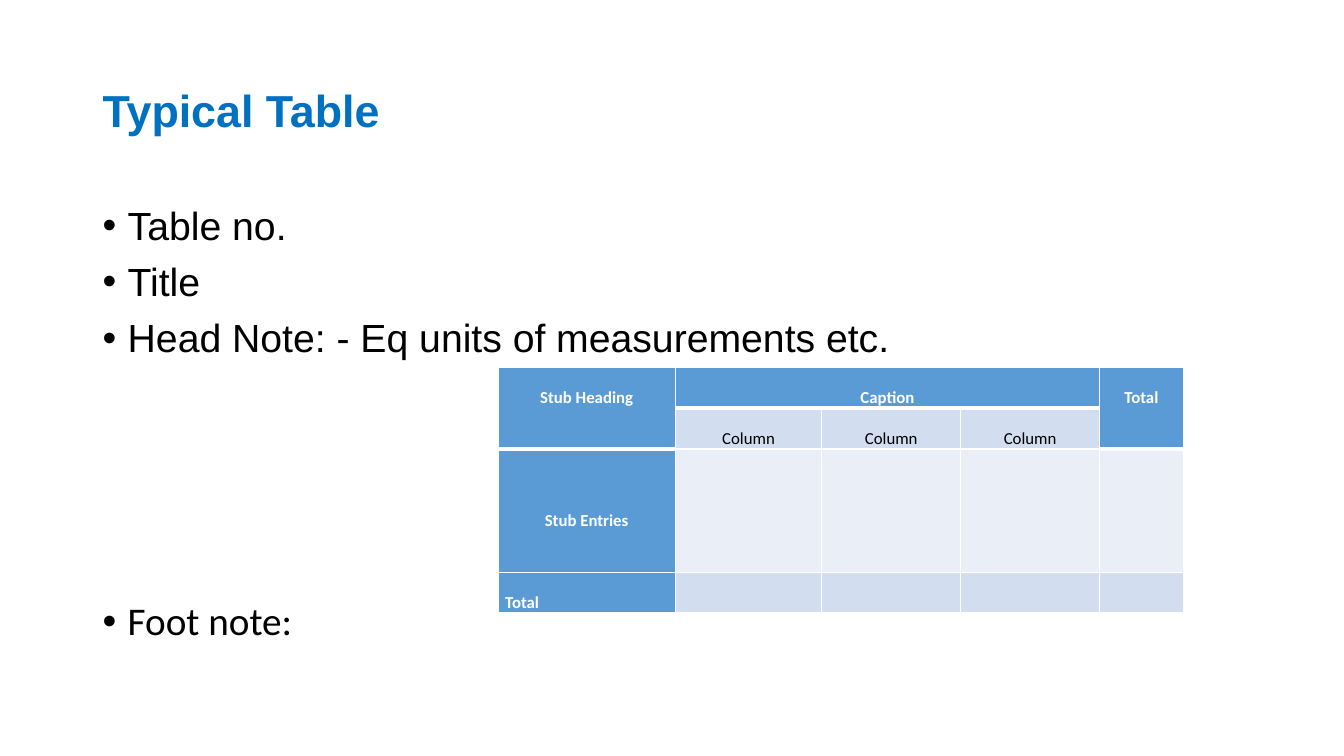
"""Build the slide that shows the parts of a typical table."""
import pptx
import pptx.dml.color
import pptx.enum.text
import pptx.oxml
import pptx.oxml.ns
import pptx.util

Cm, Pt = pptx.util.Cm, pptx.util.Pt
ALIGN = pptx.enum.text.PP_ALIGN
MIDDLE = pptx.enum.text.MSO_ANCHOR.MIDDLE

COLORS = {"title": "0070C0", "text": "000000", "light": "FFFFFF",
          "head": "5B9BD5", "band": "D2DEEF", "pale": "EAEFF7"}

TITLE = "Typical Table"
NOTES = [
    ("Table no.", "Arial", 10),
    ("Title", "Arial", 10),
    ("Head Note: - Eq units of measurements etc.", "Arial", 10),
    ("Foot note:", "Calibri", 172),
]
GRID = [
    ["Stub Heading", "Caption", "", "", "Total"],
    ["", "Column", "Column", "Column", ""],
    ["Stub Entries", "", "", "", ""],
    ["Total", "", "", "", ""],
]
FILLS = [
    ["head"] * 5,
    ["head", "band", "band", "band", "head"],
    ["head"] + ["pale"] * 4,
    ["head"] + ["band"] * 4,
]
MERGES = [((0, 0), (1, 0)), ((0, 1), (0, 3)), ((0, 4), (1, 4))]
COLUMN_WIDTHS = [4.47, 3.69, 3.5, 3.5, 2.11]
ROW_HEIGHTS = [1.03, 1.03, 3.1, 1.03]


def rgb(name):
    return pptx.dml.color.RGBColor.from_string(COLORS[name])


def style(paragraph, font, size, color, bold=False):
    paragraph.font.name = font
    paragraph.font.size = Pt(size)
    paragraph.font.bold = bold
    paragraph.font.color.rgb = rgb(color)


def place(part, left, top, width, height):
    part.left, part.top, part.width, part.height = map(Cm, (left, top, width, height))


def add_borders(cell, bottom):
    properties = cell._tc.get_or_add_tcPr()
    for side, points in (("L", 1), ("R", 1), ("T", 1), ("B", bottom)):
        properties.append(pptx.oxml.parse_xml(
            f'<a:ln{side} {pptx.oxml.ns.nsdecls("a")} w="{Pt(points)}"><a:solidFill>'
            f'<a:srgbClr val="{COLORS["light"]}"/></a:solidFill></a:ln{side}>'))


def add_notes(body):
    place(body, 2.33, 5.07, 29.21, 12.09)
    frame = body.text_frame
    frame.auto_size = pptx.enum.text.MSO_AUTO_SIZE.NONE
    frame.text = "\n".join(text for text, _, _ in NOTES)
    for paragraph, (_, font, gap) in zip(frame.paragraphs, NOTES):
        style(paragraph, font, 28, "text")
        paragraph.line_spacing = 0.9
        paragraph.space_before = Pt(gap)
        indent = paragraph._p.get_or_add_pPr()
        indent.set("marL", str(Pt(18)))
        indent.set("indent", str(-Pt(18)))


def add_grid(slide):
    table = slide.shapes.add_table(
        len(GRID), len(COLUMN_WIDTHS), Cm(12.55), Cm(9.25),
        Cm(sum(COLUMN_WIDTHS)), Cm(sum(ROW_HEIGHTS))).table
    for column, width in zip(table.columns, COLUMN_WIDTHS):
        column.width = Cm(width)
    for row, height in zip(table.rows, ROW_HEIGHTS):
        row.height = Cm(height)
    for r, labels in enumerate(GRID):
        for c, label in enumerate(labels):
            cell, fill = table.cell(r, c), FILLS[r][c]
            add_borders(cell, 3 if r < 2 and fill == "head" else 1)
            cell.fill.solid()
            cell.fill.fore_color.rgb = rgb(fill)
            cell.margin_left = cell.margin_right = Cm(0.18)
            cell.margin_top = cell.margin_bottom = 0
            cell.text = label
            paragraph = cell.text_frame.paragraphs[0]
            heading = fill == "head"
            style(paragraph, "Calibri", 12, "light" if heading else "text", heading)
            if label:
                paragraph.line_spacing = 2.0
                paragraph.alignment = ALIGN.JUSTIFY if r == 3 else ALIGN.CENTER
    table.cell(2, 0).vertical_anchor = MIDDLE
    for first, last in MERGES:
        table.cell(*first).merge(table.cell(*last))


def main():
    deck = pptx.Presentation()
    deck.slide_width, deck.slide_height = Cm(33.87), Cm(19.05)
    slide = deck.slides.add_slide(deck.slide_layouts[1])

    title = slide.shapes.title
    place(title, 2.33, 1.01, 29.21, 3.68)
    title.text_frame.text = TITLE
    title.text_frame.vertical_anchor = MIDDLE
    heading = title.text_frame.paragraphs[0]
    style(heading, "Arial", 32, "title", True)
    heading.alignment = ALIGN.LEFT
    heading.line_spacing = 0.9

    add_notes(slide.placeholders[1])
    add_grid(slide)
    deck.save("out.pptx")


if __name__ == "__main__":
    main()
